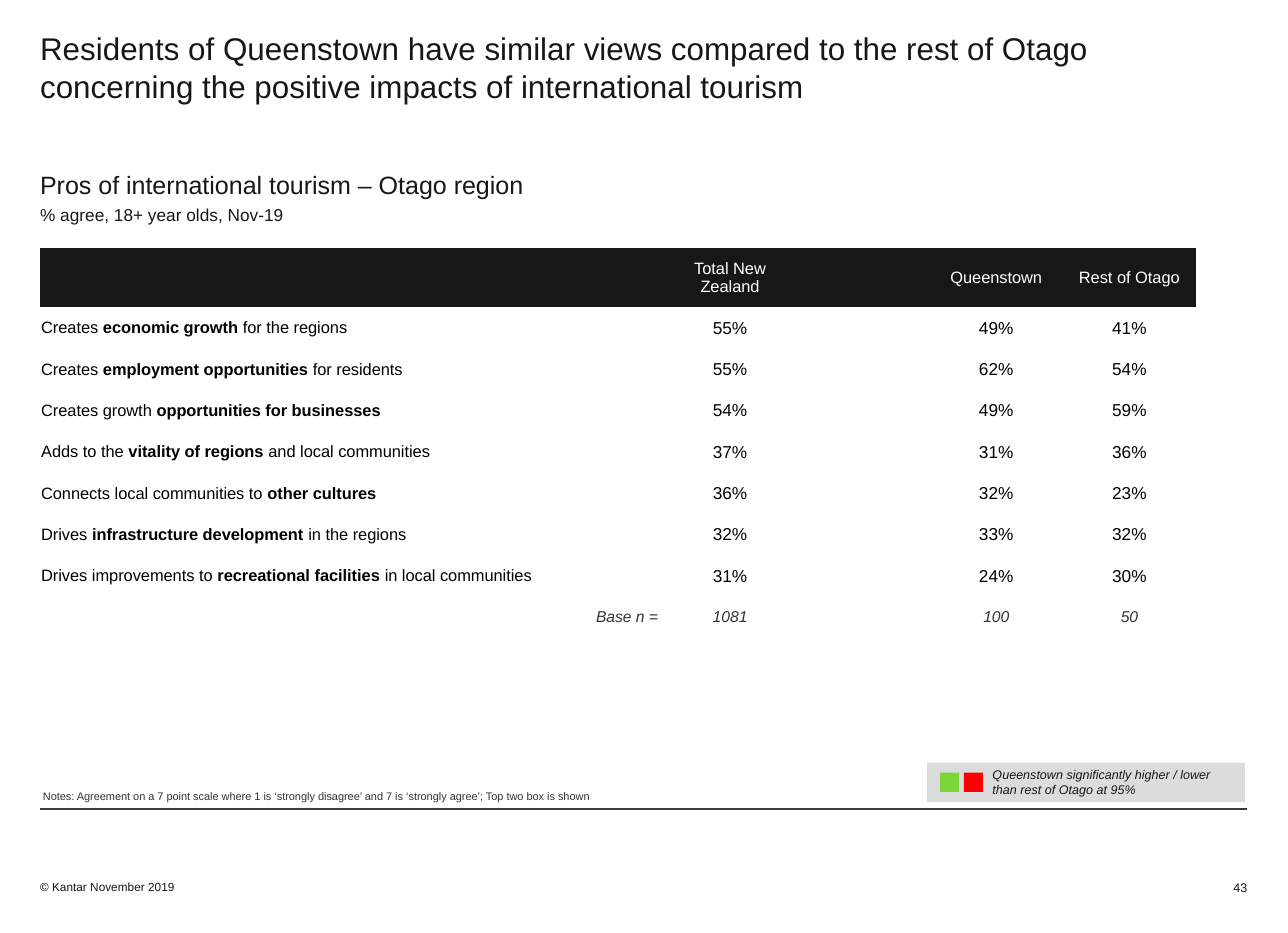
"""Build the slide on the positive impacts of international tourism in Otago."""
from dataclasses import dataclass

from lxml import etree
from pptx import Presentation
from pptx.dml.color import RGBColor
from pptx.enum.shapes import MSO_CONNECTOR, MSO_SHAPE
from pptx.enum.text import MSO_ANCHOR, MSO_AUTO_SIZE, PP_ALIGN
from pptx.oxml.ns import qn
from pptx.util import Pt

LEFT, CENTER, RIGHT = PP_ALIGN.LEFT, PP_ALIGN.CENTER, PP_ALIGN.RIGHT
TOP, MIDDLE, BOTTOM = MSO_ANCHOR.TOP, MSO_ANCHOR.MIDDLE, MSO_ANCHOR.BOTTOM
NO_FIT = MSO_AUTO_SIZE.NONE
RECTANGLE = MSO_SHAPE.RECTANGLE
STRAIGHT = MSO_CONNECTOR.STRAIGHT

INK = RGBColor(0x17, 0x17, 0x17)
BLACK = RGBColor(0x00, 0x00, 0x00)
WHITE = RGBColor(0xFF, 0xFF, 0xFF)
DARK_GREY = RGBColor(0x33, 0x33, 0x33)
RULE_GREY = RGBColor(0x3A, 0x3A, 0x3A)
PALE_GREY = RGBColor(0xDC, 0xDC, 0xDC)
GREEN = RGBColor(0x79, 0xD7, 0x38)
RED = RGBColor(0xFF, 0x00, 0x00)

FONT = "Arial"
PLAIN_TABLE_STYLE = "{2D5ABB26-0587-4C30-8999-92F81FD0307C}"
MARGIN_LEFT, CONTENT_WIDTH = 25.6, 770.7
RULE_TOP = 516.3
LABEL_WIDTH, VALUE_WIDTH = 398, 85
HEADER_HEIGHT, ROW_HEIGHT = 37.5, 26.4


@dataclass(frozen=True)
class Style:
    size: float
    color: RGBColor = INK
    align: PP_ALIGN = LEFT
    italic: bool = False


@dataclass(frozen=True)
class Frame:
    left: float
    top: float
    width: float
    height: float


@dataclass(frozen=True)
class Note:
    text: str
    frame: Frame
    style: Style
    anchor: MSO_ANCHOR = BOTTOM
    inset: float = 0


@dataclass(frozen=True)
class Block:
    frame: Frame
    color: RGBColor


@dataclass(frozen=True)
class Impact:
    before: str
    strong: str
    after: str
    shares: tuple[str, str, str, str]


HEADERS = ("", "Total New Zealand", "", "Queenstown", "Rest of Otago")
IMPACTS = (
    Impact("Creates ", "economic growth ", "for the regions", ("55%", "", "49%", "41%")),
    Impact("Creates ", "employment opportunities ", "for residents", ("55%", "", "62%", "54%")),
    Impact("Creates growth ", "opportunities for businesses", "", ("54%", "", "49%", "59%")),
    Impact("Adds to the ", "vitality of regions ", "and local communities",
           ("37%", "", "31%", "36%")),
    Impact("Connects local communities to ", "other cultures", "", ("36%", "", "32%", "23%")),
    Impact("Drives ", "infrastructure development ", "in the regions",
           ("32%", "", "33%", "32%")),
    Impact("Drives improvements to ", "recreational facilities ", "in local communities",
           ("31%", "", "24%", "30%")),
)
BASES = ("1081", "", "100", "50")

HEADER_STYLE = Style(10.5, WHITE, CENTER)
LABEL_STYLE = Style(10.5, BLACK)
SHARE_STYLE = Style(11, BLACK, CENTER)
BASE_STYLE = Style(10, DARK_GREY, CENTER, True)
BASE_LABEL_STYLE = Style(10, DARK_GREY, RIGHT, True)

LEGEND = (
    Block(Frame(591.8, 486.7, 203, 25.2), PALE_GREY),
    Block(Frame(600.2, 493.2, 12.2, 12.2), GREEN),
    Block(Frame(615.4, 493.2, 12.2, 12.2), RED),
)
NOTES = (
    Note("Notes: Agreement on a 7 point scale where 1 is ‘strongly disagree’ and "
         "7 is ‘strongly agree’; Top two box is shown",
         Frame(27.4, 495.4, 560, 16.6), Style(7, DARK_GREY)),
    Note("Queenstown significantly higher / lower than rest of Otago at 95%",
         Frame(630.7, 486.7, 154, 25.2), Style(8, italic=True), TOP, 2.9),
    Note("© Kantar November 2019", Frame(MARGIN_LEFT, 550.8, 200, 19.5), Style(7.5)),
    Note("43", Frame(751, 549.4, 45.3, 21.6), Style(8, align=RIGHT)),
)


def format_paragraph(para, style: Style) -> None:
    """Apply alignment and font to a whole paragraph."""
    para.alignment = style.align
    para.font.name = FONT
    para.font.size = Pt(style.size)
    para.font.color.rgb = style.color
    para.font.italic = style.italic


def place(shape, frame: Frame) -> None:
    """Move and size a shape."""
    shape.left, shape.top = Pt(frame.left), Pt(frame.top)
    shape.width, shape.height = Pt(frame.width), Pt(frame.height)


def set_frame(box, anchor: MSO_ANCHOR, inset: float, top_inset: float) -> None:
    """Set wrapping, anchor and insets of a text frame."""
    box.word_wrap = True
    box.auto_size = NO_FIT
    box.vertical_anchor = anchor
    box.margin_left = box.margin_right = box.margin_bottom = Pt(inset)
    box.margin_top = Pt(top_inset)


def fill_placeholder(shape, frame: Frame, lines: tuple[tuple[str, Style], ...]) -> None:
    """Write unbulleted lines into a template placeholder."""
    place(shape, frame)
    box = shape.text_frame
    set_frame(box, TOP, 0, 18.7)
    box.text = "\n".join(text for text, _ in lines)
    for index, (para, (_, style)) in enumerate(zip(box.paragraphs, lines)):
        properties = para._p.get_or_add_pPr()
        properties.set("marL", "0")
        properties.set("indent", "0")
        etree.SubElement(properties, qn("a:buNone"))
        para.space_before = Pt(3 if index else 0)
        format_paragraph(para, style)


def fill_cell(cell, spans: tuple[str, ...], style: Style, fill: RGBColor) -> None:
    """Write spans into a cell, every second one bold."""
    cell.fill.solid()
    cell.fill.fore_color.rgb = fill
    cell.vertical_anchor = MIDDLE
    cell.margin_left = cell.margin_top = Pt(0.7)
    cell.margin_right = Pt(3.5 if style.align == RIGHT else 0.7)
    cell.margin_bottom = Pt(0)
    para = cell.text_frame.paragraphs[0]
    format_paragraph(para, style)
    for index, text in enumerate(spans):
        if text:
            span = para.add_run()
            span.text = text
            span.font.bold = index % 2 == 1


def add_impact_table(page) -> None:
    """Draw the table of impacts by area."""
    row_count = len(IMPACTS) + 2
    table = page.shapes.add_table(
        row_count, len(HEADERS), Pt(MARGIN_LEFT), Pt(158.4),
        Pt(LABEL_WIDTH + 4 * VALUE_WIDTH),
        Pt(HEADER_HEIGHT + (row_count - 1) * ROW_HEIGHT)).table
    table.horz_banding = False
    table._tbl.tblPr.find(qn("a:tableStyleId")).text = PLAIN_TABLE_STYLE
    for index, column in enumerate(table.columns):
        column.width = Pt(VALUE_WIDTH if index else LABEL_WIDTH)
    for index, row in enumerate(table.rows):
        row.height = Pt(ROW_HEIGHT if index else HEADER_HEIGHT)
    for column, text in enumerate(HEADERS):
        fill_cell(table.cell(0, column), (text,), HEADER_STYLE, INK)
    body = [((item.before, item.strong, item.after), LABEL_STYLE, item.shares, SHARE_STYLE)
            for item in IMPACTS]
    body.append((("Base n =",), BASE_LABEL_STYLE, BASES, BASE_STYLE))
    for row, (label, label_style, values, value_style) in enumerate(body, 1):
        fill_cell(table.cell(row, 0), label, label_style, WHITE)
        for column, value in enumerate(values, 1):
            fill_cell(table.cell(row, column), (value,), value_style, WHITE)


def add_block(page, block: Block) -> None:
    """Draw a plain filled rectangle."""
    frame = block.frame
    shape = page.shapes.add_shape(RECTANGLE, Pt(frame.left), Pt(frame.top),
                                  Pt(frame.width), Pt(frame.height))
    shape.shadow.inherit = False
    shape.fill.solid()
    shape.fill.fore_color.rgb = block.color
    shape.line.fill.background()


def add_note(page, note: Note) -> None:
    """Draw a one-paragraph text box."""
    frame = note.frame
    box = page.shapes.add_textbox(Pt(frame.left), Pt(frame.top),
                                  Pt(frame.width), Pt(frame.height)).text_frame
    set_frame(box, note.anchor, note.inset, note.inset)
    box.text = note.text
    format_paragraph(box.paragraphs[0], note.style)


def add_rule(page) -> None:
    """Draw the line above the footer."""
    rule = page.shapes.add_connector(STRAIGHT, Pt(MARGIN_LEFT), Pt(RULE_TOP),
                                     Pt(MARGIN_LEFT + CONTENT_WIDTH), Pt(RULE_TOP))
    rule.line.color.rgb = RULE_GREY
    rule.line.width = Pt(0.75)
    etree.SubElement(rule._element.spPr, qn("a:effectLst"))


def main() -> None:
    """Build and save the deck."""
    deck = Presentation()
    deck.slide_width, deck.slide_height = Pt(822.24), Pt(595.44)
    page = deck.slides.add_slide(deck.slide_layouts[1])
    fill_placeholder(page.shapes.title, Frame(MARGIN_LEFT, 0, CONTENT_WIDTH, 89.3), (
        ("Residents of Queenstown have similar views compared to the rest of Otago "
         "concerning the positive impacts of international tourism", Style(20)),))
    fill_placeholder(page.placeholders[1], Frame(MARGIN_LEFT, 89.3, CONTENT_WIDTH, 66.2), (
        ("Pros of international tourism – Otago region", Style(16)),
        ("% agree, 18+ year olds, Nov-19", Style(11))))
    add_rule(page)
    add_impact_table(page)
    for block in LEGEND:
        add_block(page, block)
    for note in NOTES:
        add_note(page, note)
    deck.save("out.pptx")


if __name__ == "__main__":
    main()
